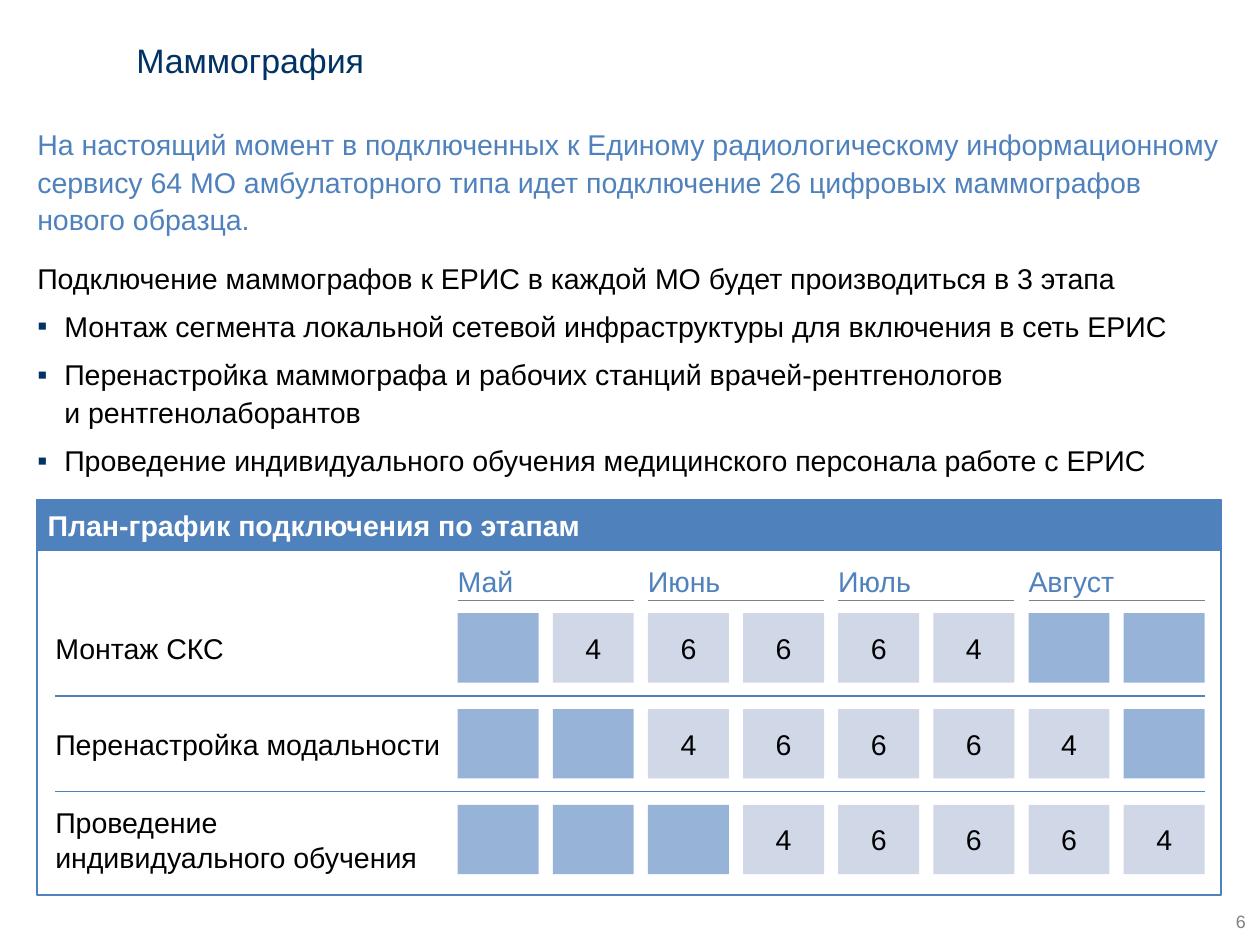
from lxml import etree
from pptx import Presentation
from pptx.dml.color import RGBColor
from pptx.enum.shapes import MSO_CONNECTOR, MSO_SHAPE
from pptx.enum.text import MSO_ANCHOR, MSO_AUTO_SIZE, PP_ALIGN
from pptx.oxml.ns import qn
from pptx.util import Inches, Pt

RECTANGLE = MSO_SHAPE.RECTANGLE
STRAIGHT = MSO_CONNECTOR.STRAIGHT
LEFT, CENTER, RIGHT = PP_ALIGN.LEFT, PP_ALIGN.CENTER, PP_ALIGN.RIGHT
TOP, MIDDLE, BOTTOM = MSO_ANCHOR.TOP, MSO_ANCHOR.MIDDLE, MSO_ANCHOR.BOTTOM

COLORS = {
    "navy": "003264",
    "blue": "4F81BD",
    "idle": "97B4D8",
    "active": "D0D8E8",
    "gray": "808080",
    "black": "000000",
    "white": "FFFFFF",
}

MARGIN, CONTENT_WIDTH = 0.29, 9.21
PANEL_TOP, PANEL_HEIGHT, HEADER_HEIGHT = 3.89, 3.07, 0.39
LABEL_LEFT, LABEL_WIDTH = 0.43, 3.01
GRID_LEFT, GRID_TOP, GRID_RIGHT = 3.56, 4.77, 9.37
COLUMN_STEP, ROW_STEP = 0.74, 0.745
CELL_WIDTH, CELL_HEIGHT = 0.63, 0.54
MONTH_TOP, MONTH_HEIGHT = 4.38, 0.29

MONTHS = ["Май", "Июнь", "Июль", "Август"]
STAGES = [
    ("Монтаж СКС", ["", "4", "6", "6", "6", "4", "", ""]),
    ("Перенастройка модальности", ["", "", "4", "6", "6", "6", "4", ""]),
    ("Проведение индивидуального обучения", ["", "", "", "4", "6", "6", "6", "4"]),
]
INTRO = (
    "На настоящий момент в подключенных к Единому радиологическому информационному "
    "сервису 64 МО амбулаторного типа идет подключение 26 цифровых маммографов "
    "нового образца."
)
STEPS = [
    "Подключение маммографов к ЕРИС в каждой МО будет производиться в 3 этапа",
    "Монтаж сегмента локальной сетевой инфраструктуры для включения в сеть ЕРИС",
    "Перенастройка маммографа и рабочих станций врачей-рентгенологов\vи рентгенолаборантов",
    "Проведение индивидуального обучения медицинского персонала работе с ЕРИС",
]


def write(shape, text, color="black", size=16, align=LEFT, anchor=TOP, bold=False, inset=0):
    frame = shape.text_frame
    frame.text = text
    frame.word_wrap = True
    frame.auto_size = MSO_AUTO_SIZE.NONE
    frame.vertical_anchor = anchor
    frame.margin_left = frame.margin_right = Inches(inset)
    frame.margin_top = frame.margin_bottom = Inches(inset)
    for para in frame.paragraphs:
        para.alignment = align
        para.space_before = Pt(0)
        for span in para.runs:
            span.font.name = "Arial"
            span.font.size = Pt(size)
            span.font.bold = bold
            span.font.color.rgb = RGBColor.from_string(COLORS[color])


def rule(left, right, top, color):
    line = page.shapes.add_connector(
        STRAIGHT, Inches(left), Inches(top), Inches(right), Inches(top))
    line.line.color.rgb = RGBColor.from_string(COLORS[color])
    line.line.width = Pt(0.75)
    etree.SubElement(line._element.spPr, qn("a:effectLst"))


deck = Presentation()
deck.slide_width, deck.slide_height = Inches(9.8), Inches(7.35)
page = deck.slides.add_slide(deck.slide_layouts[1])

title, body = page.placeholders
title.left, title.top, title.width, title.height = map(Inches, (1.06, 0.31, 7.92, 0.32))
write(title, "Маммография", "navy", 19, anchor=MIDDLE)

intro = page.shapes.add_textbox(
    Inches(MARGIN), Inches(0.96), Inches(CONTENT_WIDTH), Inches(0.89))
write(intro, INTRO, "blue")
intro.text_frame.paragraphs[0].line_spacing = 1.1

body.left, body.top, body.width, body.height = map(Inches, (MARGIN, 2, CONTENT_WIDTH, 1.73))
write(body, "\n".join(STEPS))
for index, para in enumerate(body.text_frame.paragraphs):
    properties = para._p.get_or_add_pPr()
    indent = Inches(0.21) if index else 0
    properties.set("marL", str(indent))
    properties.set("indent", str(-indent))
    if index:
        bullet_color = etree.SubElement(properties, qn("a:buClr"))
        etree.SubElement(bullet_color, qn("a:srgbClr"), val=COLORS["navy"])
        etree.SubElement(properties, qn("a:buFont"), typeface="Arial")
        etree.SubElement(properties, qn("a:buChar"), char="▪")
        para.space_before = Pt(6)
    else:
        etree.SubElement(properties, qn("a:buNone"))
    para.line_spacing = 1.1

for height, filled in ((PANEL_HEIGHT, False), (HEADER_HEIGHT, True)):
    panel = page.shapes.add_shape(
        RECTANGLE, Inches(MARGIN), Inches(PANEL_TOP), Inches(CONTENT_WIDTH), Inches(height))
    panel.shadow.inherit = False
    panel.line.color.rgb = RGBColor.from_string(COLORS["blue"])
    panel.line.width = Pt(1)
    if filled:
        panel.fill.solid()
        panel.fill.fore_color.rgb = RGBColor.from_string(COLORS["blue"])
        write(panel, "План-график подключения по этапам", "white",
              anchor=MIDDLE, bold=True, inset=0.08)
    else:
        panel.fill.background()

for index, month in enumerate(MONTHS):
    left = GRID_LEFT + 2 * index * COLUMN_STEP
    width = COLUMN_STEP + CELL_WIDTH
    box = page.shapes.add_textbox(
        Inches(left), Inches(MONTH_TOP), Inches(width), Inches(MONTH_HEIGHT))
    write(box, month, "blue", anchor=BOTTOM)
    box.text_frame.margin_bottom = Inches(0.02)
    rule(left, left + width, MONTH_TOP + MONTH_HEIGHT, "gray")

for row, (stage, counts) in enumerate(STAGES):
    top = GRID_TOP + row * ROW_STEP
    label = page.shapes.add_textbox(
        Inches(LABEL_LEFT), Inches(top), Inches(LABEL_WIDTH), Inches(CELL_HEIGHT))
    write(label, stage, anchor=MIDDLE)
    for column, count in enumerate(counts):
        cell = page.shapes.add_shape(
            RECTANGLE, Inches(GRID_LEFT + column * COLUMN_STEP), Inches(top),
            Inches(CELL_WIDTH), Inches(CELL_HEIGHT))
        cell.shadow.inherit = False
        cell.line.fill.background()
        cell.fill.solid()
        cell.fill.fore_color.rgb = RGBColor.from_string(COLORS["active" if count else "idle"])
        if count:
            write(cell, count, align=CENTER, anchor=MIDDLE)
    if row:
        rule(LABEL_LEFT, GRID_RIGHT, top - (ROW_STEP - CELL_HEIGHT) / 2, "blue")

number = page.shapes.add_textbox(Inches(9.52), Inches(7.08), Inches(0.17), Inches(0.17))
write(number, "6", "gray", 10, RIGHT, MIDDLE)

deck.save("out.pptx")
